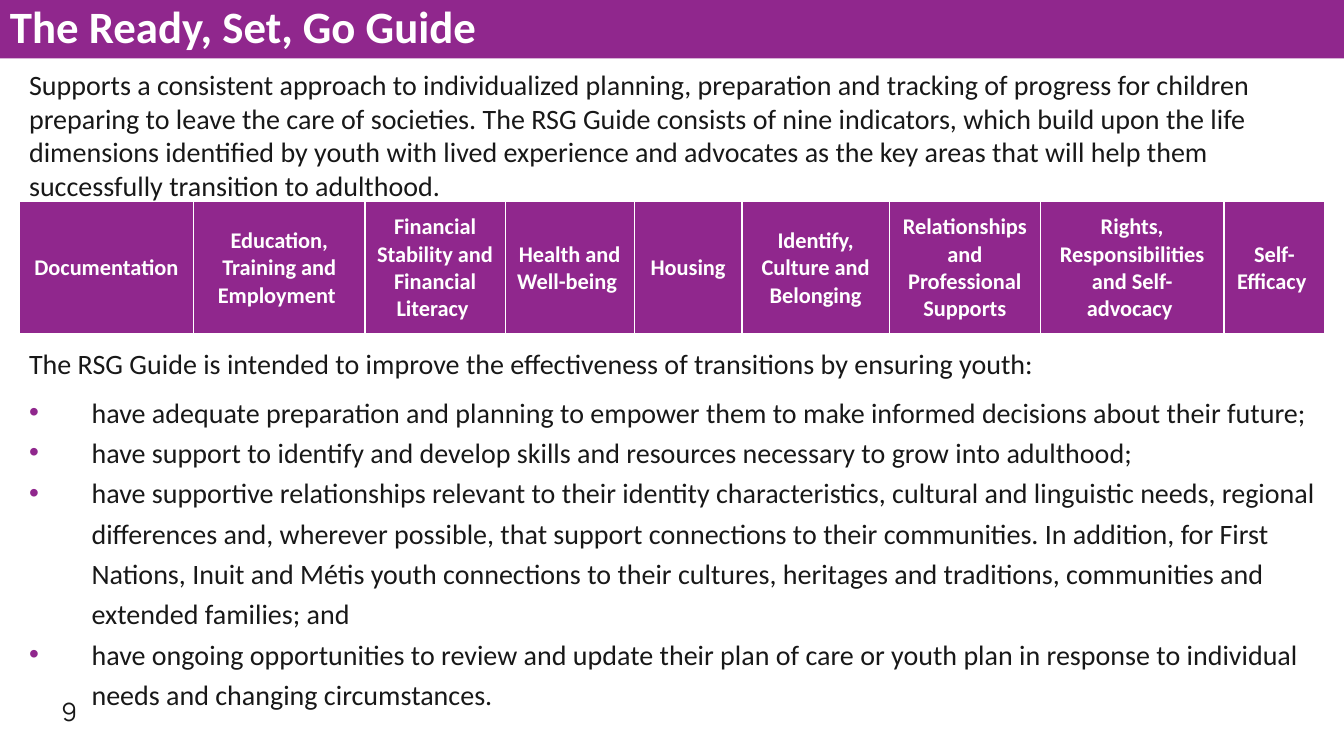
from dataclasses import dataclass

from lxml.etree import SubElement
from pptx import Presentation
from pptx.dml.color import RGBColor
from pptx.enum.shapes import MSO_SHAPE
from pptx.enum.text import MSO_ANCHOR, PP_ALIGN
from pptx.oxml.ns import qn
from pptx.util import Inches, Pt

COLOURS = {"purple": "90278D", "white": "FFFFFF", "ink": "181818"}
MARGIN = 0.19
BODY_WIDTH = 12.96
BULLET_INDENT = 0.62
BORDER_POINTS = {"a:lnL": 1, "a:lnR": 1, "a:lnT": 1, "a:lnB": 3}


@dataclass
class Style:
    size: float
    colour: str = "ink"
    bold: bool = False
    font: str = "Calibri"


@dataclass
class Indicator:
    name: str
    width: float


TITLE = Style(32, "white", True)
BODY = Style(20)
HEADING = Style(16, "white", True)
PAGE_NUMBER = Style(18, font="Manrope")

INTRODUCTION = (
    "Supports a consistent approach to individualized planning, preparation and tracking of "
    "progress for children preparing to leave the care of societies. The RSG Guide consists of "
    "nine indicators, which build upon the life dimensions identified by youth with lived "
    "experience and advocates as the key areas that will help them successfully transition to "
    "adulthood."
)
INDICATORS = [
    Indicator("Documentation", 1.73),
    Indicator("Education, Training and Employment ", 1.7),
    Indicator("Financial Stability and Financial Literacy ", 1.39),
    Indicator("Health and Well-being ", 1.28),
    Indicator("Housing", 1.07),
    Indicator("Identify, Culture and Belonging", 1.46),
    Indicator("Relationships and Professional Supports", 1.5),
    Indicator("Rights, Responsibilities and Self- advocacy ", 1.82),
    Indicator("Self- Efficacy ", 1),
]
PURPOSE = "The RSG Guide is intended to improve the effectiveness of transitions by ensuring youth:"
AIMS = [
    "have adequate preparation and planning to empower them to make informed decisions about "
    "their future;",
    "have support to identify and develop skills and resources necessary to grow into adulthood;",
    "have supportive relationships relevant to their identity characteristics, cultural and "
    "linguistic needs, regional differences and, wherever possible, that support connections to "
    "their communities. In addition, for First Nations, Inuit and Métis youth connections to "
    "their cultures, heritages and traditions, communities and extended families; and",
    "have ongoing opportunities to review and update their plan of care or youth plan in "
    "response to individual needs and changing circumstances.",
]


def rgb(colour: str) -> RGBColor:
    return RGBColor.from_string(COLOURS[colour])


def write(para, text: str, style: Style) -> None:
    para.text = text
    for span in para.runs:
        span.font.name = style.font
        span.font.size = Pt(style.size)
        span.font.bold = style.bold
        span.font.color.rgb = rgb(style.colour)


def add_box(page, left: float, top: float, width: float, height: float):
    box = page.shapes.add_textbox(Inches(left), Inches(top), Inches(width), Inches(height))
    box.text_frame.word_wrap = True
    return box.text_frame


def add_bullet(para) -> None:
    properties = para._p.get_or_add_pPr()
    properties.set("marL", str(Inches(BULLET_INDENT)))
    properties.set("indent", str(-Inches(BULLET_INDENT)))
    colour = SubElement(properties, qn("a:buClr"))
    SubElement(colour, qn("a:srgbClr"), val=COLOURS["purple"])
    SubElement(properties, qn("a:buFont"), typeface="Arial")
    SubElement(properties, qn("a:buChar"), char="•")


def add_borders(cell) -> None:
    properties = cell._tc.get_or_add_tcPr()
    for position, (tag, points) in enumerate(BORDER_POINTS.items()):
        line = SubElement(properties, qn(tag), w=str(Pt(points)))
        fill = SubElement(line, qn("a:solidFill"))
        SubElement(fill, qn("a:srgbClr"), val=COLOURS["white"])
        properties.insert(position, line)


def add_title(page) -> None:
    banner = page.shapes.add_shape(MSO_SHAPE.RECTANGLE, 0, 0, Inches(13.33), Inches(0.58))
    banner.shadow.inherit = False
    banner.fill.solid()
    banner.fill.fore_color.rgb = rgb("purple")
    banner.line.fill.background()
    frame = banner.text_frame
    frame.vertical_anchor = MSO_ANCHOR.MIDDLE
    para = frame.paragraphs[0]
    para.alignment = PP_ALIGN.LEFT
    para.line_spacing = 0.9
    write(para, "The Ready, Set, Go Guide", TITLE)


def add_indicators(page) -> None:
    width = sum(indicator.width for indicator in INDICATORS)
    table = page.shapes.add_table(
        1, len(INDICATORS), Inches(MARGIN), Inches(2), Inches(width), Inches(1.32)
    ).table
    for column, indicator in enumerate(INDICATORS):
        table.columns[column].width = Inches(indicator.width)
        cell = table.cell(0, column)
        cell.fill.solid()
        cell.fill.fore_color.rgb = rgb("purple")
        cell.vertical_anchor = MSO_ANCHOR.MIDDLE
        add_borders(cell)
        para = cell.text_frame.paragraphs[0]
        para.alignment = PP_ALIGN.CENTER
        write(para, indicator.name, HEADING)


def add_aims(page) -> None:
    frame = add_box(page, MARGIN, 3.32, BODY_WIDTH, 4.12)
    lead = frame.paragraphs[0]
    lead.line_spacing = 1.2
    lead.space_after = Pt(6)
    write(lead, PURPOSE, BODY)
    for aim in AIMS:
        para = frame.add_paragraph()
        add_bullet(para)
        para.line_spacing = 1.2
        write(para, aim, BODY)


def main() -> None:
    deck = Presentation()
    deck.slide_width, deck.slide_height = Inches(13.33), Inches(7.5)
    page = deck.slides.add_slide(deck.slide_layouts[6])
    add_title(page)
    introduction = add_box(page, MARGIN, 0.62, BODY_WIDTH, 1.35)
    write(introduction.paragraphs[0], INTRODUCTION, BODY)
    number = add_box(page, 0.51, 6.86, 0.56, 0.4)
    number.vertical_anchor = MSO_ANCHOR.MIDDLE
    write(number.paragraphs[0], "9", PAGE_NUMBER)
    add_indicators(page)
    add_aims(page)
    deck.save("out.pptx")


if __name__ == "__main__":
    main()
